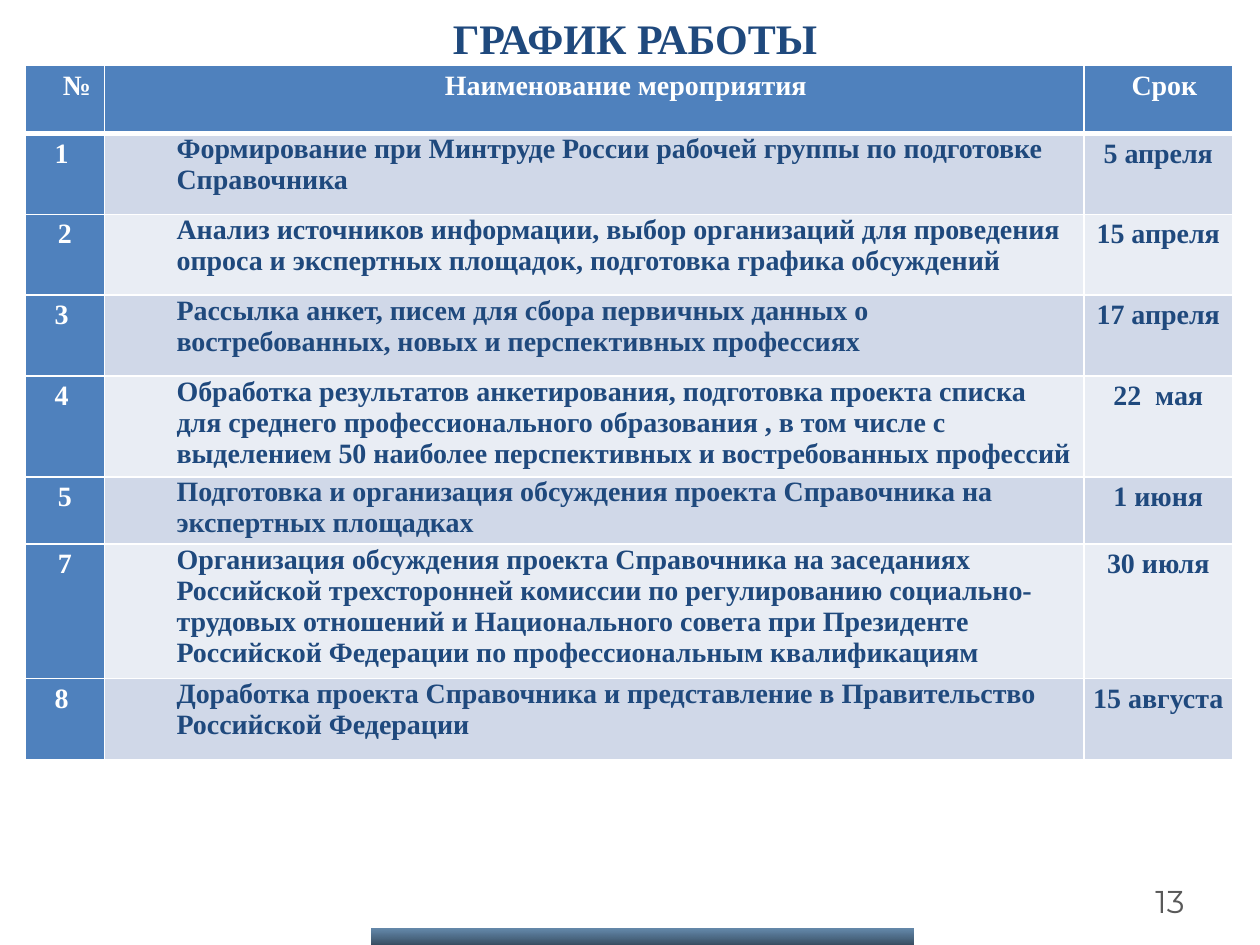
from lxml import etree
from pptx import Presentation
from pptx.dml.color import RGBColor
from pptx.enum import shapes, text
from pptx.oxml import ns
from pptx.util import Cm, Pt

COLORS = {
    "white": "FFFFFF", "navy": "1F497D", "blue": "4F81BD",
    "dark_band": "D0D8E8", "light_band": "E9EDF4", "grey": "595959",
    "bar_top": "003C73", "bar_bottom": "001C35",
}
SERIF = "Times New Roman"
HEADERS = ["№", "Наименование мероприятия", "Срок"]
HEADER_INDENTS = [0.48, 1.27, 0.25]
COLUMN_WIDTHS = [1.6, 19.74, 3.0]
HEADER_HEIGHT = 1.37
EVENTS = [
    ("1 ", "Формирование при Минтруде России рабочей группы по подготовке Справочника",
     "5 апреля", 1.63),
    ("2", "Анализ источников информации, выбор организаций для проведения опроса и "
     "экспертных площадок, подготовка графика обсуждений", "15 апреля", 1.63),
    ("3 ", "Рассылка анкет, писем для сбора первичных данных о востребованных, новых и "
     "перспективных профессиях", "17 апреля", 1.63),
    ("4 ", "Обработка результатов анкетирования, подготовка проекта списка для среднего "
     "профессионального образования , в том числе с выделением 50 наиболее "
     "перспективных и востребованных профессий", "22  мая", 0.86),
    ("5", "Подготовка и организация обсуждения проекта Справочника на экспертных площадках",
     "1 июня", 1.02),
    ("7", "Организация обсуждения проекта Справочника на заседаниях Российской "
     "трехсторонней комиссии по регулированию социально-трудовых отношений и "
     "Национального совета при Президенте Российской Федерации по профессиональным "
     "квалификациям", "30 июля", 1.7),
    ("8 ", "Доработка проекта Справочника и представление в Правительство "
     "Российской Федерации", "15 августа", 1.63),
]


def color(name):
    """Return the named palette colour."""
    return RGBColor.from_string(COLORS[name])


def add_run(paragraph, content, size, color_name, font_name=SERIF, bold=True):
    """Append a formatted run to a paragraph."""
    run = paragraph.add_run()
    run.text = content
    run.font.size = Pt(size)
    run.font.name = font_name
    run.font.bold = bold
    run.font.color.rgb = color(color_name)


def set_borders(cell, top, bottom):
    """Draw white borders, with the given top and bottom widths in points."""
    properties = cell._tc.get_or_add_tcPr()
    widths = {"a:lnL": 1, "a:lnR": 1, "a:lnT": top, "a:lnB": bottom}
    for position, (tag, width) in enumerate(widths.items()):
        line = etree.Element(ns.qn(tag), w=str(Pt(width)))
        fill = etree.SubElement(line, ns.qn("a:solidFill"))
        etree.SubElement(fill, ns.qn("a:srgbClr"), val=COLORS["white"])
        properties.insert(position, line)


def fill_cell(cell, content, fill, font_color, centered=True, margin=0, indent=0):
    """Write one table cell with its fill, spacing and indent."""
    cell.margin_left = cell.margin_right = Cm(0.18)
    cell.margin_top = cell.margin_bottom = 0
    cell.fill.solid()
    cell.fill.fore_color.rgb = color(fill)
    paragraph = cell.text_frame.paragraphs[0]
    paragraph.alignment = text.PP_ALIGN.CENTER if centered else text.PP_ALIGN.LEFT
    if centered:
        paragraph.line_spacing = 1.15
        paragraph.space_before = Pt(6)
    properties = paragraph._p.get_or_add_pPr()
    properties.set("marL", str(Cm(margin)))
    properties.set("indent", str(Cm(indent)))
    add_run(paragraph, content, 16, font_color)


def add_schedule(slide):
    """Add the table of events and dates."""
    heights = [HEADER_HEIGHT] + [event[-1] for event in EVENTS]
    frame = slide.shapes.add_table(
        len(heights), len(HEADERS), Cm(0.51), Cm(1.32),
        Cm(sum(COLUMN_WIDTHS)), Cm(sum(heights)))
    table = frame.table
    for column, width in zip(table.columns, COLUMN_WIDTHS):
        column.width = Cm(width)
    for row, height in zip(table.rows, heights):
        row.height = Cm(height)
    for index, (header, margin) in enumerate(zip(HEADERS, HEADER_INDENTS)):
        fill_cell(table.cell(0, index), header, "blue", "white", margin=margin)
    for index, (number, event, date, _) in enumerate(EVENTS, 1):
        band = "dark_band" if index % 2 else "light_band"
        fill_cell(table.cell(index, 0), number, "blue", "white", margin=0.97, indent=-0.97)
        fill_cell(table.cell(index, 1), event, band, "navy", centered=False, margin=1.27)
        fill_cell(table.cell(index, 2), date, band, "navy")
    for index, row in enumerate(table.rows):
        for cell in row.cells:
            set_borders(cell, 3 if index == 1 else 1, 3 if index == 0 else 1)


def format_title(slide):
    """Place and write the slide title."""
    title = slide.shapes.title
    title.left, title.top, title.width, title.height = Cm(3.3), Cm(0.13), Cm(19), Cm(1.27)
    frame = title.text_frame
    frame.auto_size = text.MSO_AUTO_SIZE.SHAPE_TO_FIT_TEXT
    frame.vertical_anchor = text.MSO_ANCHOR.TOP
    paragraph = frame.paragraphs[0]
    paragraph.alignment = text.PP_ALIGN.CENTER
    paragraph.space_before = Pt(0)
    add_run(paragraph, "ГРАФИК РАБОТЫ", 24, "navy")


def add_footer_bar(slide):
    """Add the translucent gradient bar at the bottom edge."""
    bar = slide.shapes.add_shape(
        shapes.MSO_SHAPE.RECTANGLE, Cm(7.5), Cm(18.72), Cm(10.92), Cm(0.33))
    bar.shadow.inherit = False
    bar.line.fill.background()
    bar.fill.gradient()
    bar.fill.gradient_angle = 270
    stops = zip(bar.fill.gradient_stops, (0, 1), ("bar_top", "bar_bottom"))
    for stop, position, name in stops:
        stop.position = position
        stop.color.rgb = color(name)
    values = bar._element.spPr.iter(ns.qn("a:srgbClr"))
    for value, opacity in zip(list(values), (60, 80)):
        etree.SubElement(value, ns.qn("a:alpha"), val=str(opacity * 1000))


def add_page_number(slide):
    """Add the page number at the lower right."""
    box = slide.shapes.add_textbox(Cm(18.21), Cm(17.65), Cm(5.92), Cm(1.02))
    frame = box.text_frame
    frame.word_wrap = True
    frame.vertical_anchor = text.MSO_ANCHOR.MIDDLE
    paragraph = frame.paragraphs[0]
    paragraph.alignment = text.PP_ALIGN.RIGHT
    add_run(paragraph, "13", 18, "grey", "Montserrat", bold=False)


def main():
    """Build and save the presentation."""
    presentation = Presentation()
    presentation.slide_width, presentation.slide_height = Cm(25.4), Cm(19.05)
    slide = presentation.slides.add_slide(presentation.slide_layouts[5])
    add_schedule(slide)
    format_title(slide)
    add_footer_bar(slide)
    add_page_number(slide)
    presentation.save("out.pptx")


if __name__ == "__main__":
    main()
